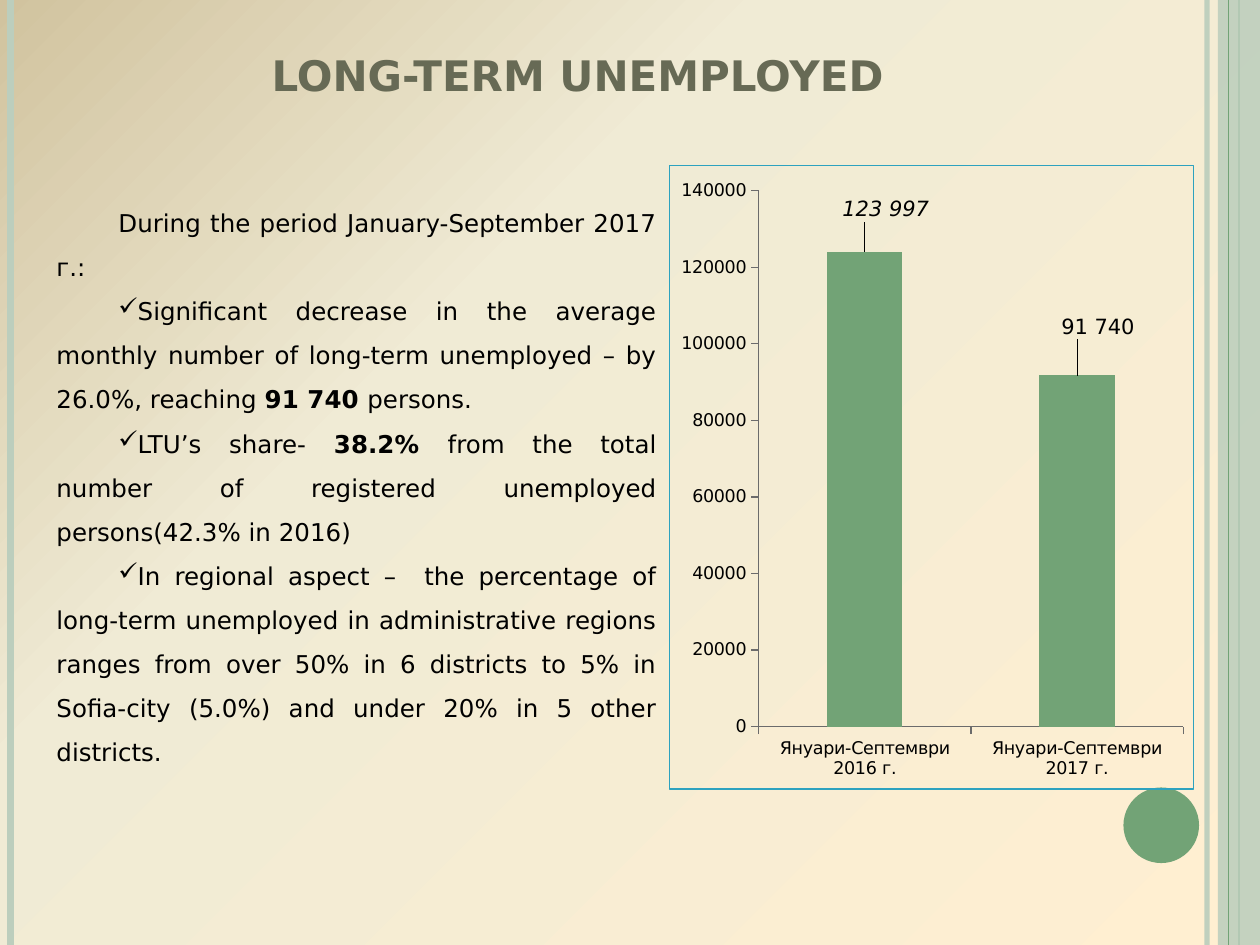
import lxml.etree
import pptx
import pptx.chart.data
import pptx.dml.color
import pptx.enum.chart
import pptx.enum.shapes
import pptx.enum.text
import pptx.oxml
import pptx.oxml.ns
import pptx.util

Pt = pptx.util.Pt
qn = pptx.oxml.ns.qn
ALIGN = pptx.enum.text.PP_ALIGN
ANCHOR = pptx.enum.text.MSO_ANCHOR
SHAPE = pptx.enum.shapes.MSO_SHAPE
FONT = "DejaVu Sans"
COLORS = {"pale": "BCCEBD", "green": "72A376", "title": "676A55", "text": "000000",
          "axis": "6B6B6B", "frame": "2DA2BF"}
STOPS = [(0, "FFEFD1"), (65, "F0EBD5"), (100, "D1C39F")]
POINTS = [("123 997", True, 0.04, -0.04), ("91 740", False, 0.04, -0.05)]
NOTES = [
    (False, [("During the period January-September 2017 г.:", False)]),
    (True, [("Significant decrease in the average monthly number of long-term "
             "unemployed – by 26.0%, reaching ", False),
            ("91 740 ", True), ("persons. ", False)]),
    (True, [("LTU’s share- ", False), ("38.2% ", True),
            ("from the total number of registered unemployed persons(42.3% in 2016)", False)]),
    (True, [("In regional aspect –  the percentage of long-term unemployed in "
             "administrative regions ranges from over 50% in 6 districts to 5% in "
             "Sofia-city (5.0%) and under 20% in 5 other districts.", False)]),
]


def rgb(name):
    """Return the named colour."""
    return pptx.dml.color.RGBColor.from_string(COLORS[name])


def parse(xml):
    """Parse drawing or chart XML with its namespaces."""
    spaces = pptx.oxml.ns.nsdecls("a", "c", "p")
    return pptx.oxml.parse_xml(xml.replace(">", f" {spaces}>", 1))


def style(font, size, color="text", bold=False, italic=False):
    """Format a font."""
    font.name, font.size, font.bold, font.italic = FONT, Pt(size), bold, italic
    font.color.rgb = rgb(color)


def write(para, text, align=None, **form):
    """Add formatted text to a paragraph."""
    if align is not None:
        para.alignment = align
    run = para.add_run()
    run.text = text
    style(run.font, **form)


def frame(slide, box, anchor):
    """Add a wrapping text box and return its text frame."""
    body = slide.shapes.add_textbox(*map(Pt, box)).text_frame
    body.word_wrap = True
    body.vertical_anchor = anchor
    return body


def fade(fill, alpha):
    """Set the opacity percentage of a solid fill element."""
    tint = fill.find(".//" + qn("a:srgbClr"))
    lxml.etree.SubElement(tint, qn("a:alpha")).set("val", str(alpha * 1000))


def back(slide):
    """Fill the background with a radial gradient."""
    stops = "".join(f'<a:gs pos="{pos * 1000}"><a:srgbClr val="{tone}"/></a:gs>'
                    for pos, tone in STOPS)
    node = parse(f'<p:bg><p:bgPr><a:gradFill rotWithShape="1"><a:gsLst>{stops}</a:gsLst>'
                 '<a:path path="circle"><a:fillToRect l="100000" t="100000" r="0" b="0"/>'
                 '</a:path></a:gradFill><a:effectLst/></p:bgPr></p:bg>')
    slide.element.cSld.insert(0, node)


def solid(slide, kind, box, color):
    """Add a plain filled shape."""
    shape = slide.shapes.add_shape(kind, *map(Pt, box))
    shape.shadow.inherit = False
    shape.fill.solid()
    shape.fill.fore_color.rgb = rgb(color)
    shape.line.fill.background()
    return shape


def rule(slide, x, top, height, color, width):
    """Add a vertical line."""
    line = slide.shapes.add_connector(
        pptx.enum.shapes.MSO_CONNECTOR.STRAIGHT, Pt(x), Pt(top), Pt(x), Pt(top + height))
    line.line.color.rgb = rgb(color)
    line.line.width = Pt(width)
    lxml.etree.SubElement(line._element.spPr, qn("a:effectLst"))
    return line


def trim(slide, box):
    """Draw the edge bands and the disc."""
    left, top, width, height = box
    right = left + width
    line = rule(slide, right - 30.25, top, height, "pale", 3)
    fade(line._element.spPr, 93)
    rule(slide, left + 6, top, height, "pale", 4.5)
    rule(slide, right - 12, top, height, "green", 1.5)
    band = solid(slide, SHAPE.RECTANGLE, (right - 24, top, 24, height), "pale")
    fade(band._element.spPr, 87)
    rule(slide, right - 18, top, height, "green", 0.75)
    solid(slide, SHAPE.OVAL, (right - 78, top + height - 90, 43.2, 43.2), "green")


def title(slide, box):
    """Write the heading."""
    body = frame(slide, box, ANCHOR.BOTTOM)
    write(body.paragraphs[0], "LONG-TERM UNEMPLOYED", ALIGN.CENTER,
          size=24, color="title", bold=True)


def notes(slide, box):
    """Write the introduction and its ticked points."""
    body = frame(slide, box, ANCHOR.MIDDLE)
    for num, (tick, parts) in enumerate(NOTES):
        para = body.add_paragraph() if num else body.paragraphs[0]
        para.line_spacing = 1.5
        prop = para._p.get_or_add_pPr()
        prop.set("marL", "0")
        prop.set("indent", str(int(Pt(35.4))))
        if tick:
            prop.append(parse('<a:buChar char="✓"></a:buChar>'))
        for text, bold in parts:
            write(para, text, ALIGN.JUSTIFY, size=14, bold=bold)


def layout(x, y, extra=""):
    """Build a manual chart layout."""
    return parse(f'<c:layout><c:manualLayout>{extra}<c:x val="{x}"/><c:y val="{y}"/>'
                 '</c:manualLayout></c:layout>')


def inner(chart, x, y, w, h):
    """Fix the inner plot area as fractions of the chart."""
    area = chart._chartSpace.chart.plotArea
    for old in area.findall(qn("c:layout")):
        area.remove(old)
    node = layout(x, y, '<c:layoutTarget val="inner"/><c:xMode val="edge"/><c:yMode val="edge"/>')
    for tag, size in (("w", w), ("h", h)):
        lxml.etree.SubElement(node[0], qn(f"c:{tag}")).set("val", str(size))
    area.insert(0, node)


def graph(slide, box):
    """Draw the column chart of the two periods."""
    data = pptx.chart.data.CategoryChartData(number_format="0")
    data.categories = ["Януари-Септември 2016 г.", "Януари-Септември 2017 г."]
    data.add_series("Series 1", [123997, 91740])
    kind = pptx.enum.chart.XL_CHART_TYPE.COLUMN_CLUSTERED
    chart = slide.shapes.add_chart(kind, *map(Pt, box), data).chart
    chart.has_legend = chart.has_title = False
    style(chart.font, 10)
    chart._chartSpace.chart.addnext(parse(
        f'<c:spPr><a:noFill/><a:ln w="{int(Pt(0.75))}"><a:solidFill>'
        f'<a:srgbClr val="{COLORS["frame"]}"/></a:solidFill></a:ln></c:spPr>'))
    inner(chart, 0.17, 0.04, 0.81, 0.86)
    for axis in (chart.category_axis, chart.value_axis):
        axis.has_major_gridlines = False
        axis.major_tick_mark = pptx.enum.chart.XL_TICK_MARK.OUTSIDE
        axis.format.line.color.rgb = rgb("axis")
        style(axis.tick_labels.font, 10)
    axis.minimum_scale, axis.maximum_scale, axis.major_unit = 0, 140000, 20000
    plot = chart.plots[0]
    plot.gap_width = 182
    plot.vary_by_categories = False
    bars = plot.series[0]
    bars.format.fill.solid()
    bars.format.fill.fore_color.rgb = rgb("green")
    bars.data_labels.show_value = True
    style(bars.data_labels.font, 12)
    for num, (text, italic, x, y) in enumerate(POINTS):
        label = bars.points[num].data_label
        write(label.text_frame.paragraphs[0], text, size=12, italic=italic)
        label.position = pptx.enum.chart.XL_LABEL_POSITION.OUTSIDE_END
        node = bars.data_labels._element.findall(qn("c:dLbl"))[num]
        node.find(qn("c:idx")).addnext(layout(x, y))


def main():
    """Build and save the slide."""
    deck = pptx.Presentation()
    deck.slide_width, deck.slide_height = Pt(720), Pt(540)
    slide = deck.slides.add_slide(deck.slide_layouts[6])
    back(slide)
    trim(slide, (0, 0, 720, 540))
    title(slide, (36, 21.6, 588, 38.9))
    graph(slide, (382.3, 94.3, 300.2, 357))
    notes(slide, (25.2, 105.1, 357.1, 338.4))
    deck.save("out.pptx")


if __name__ == "__main__":
    main()
